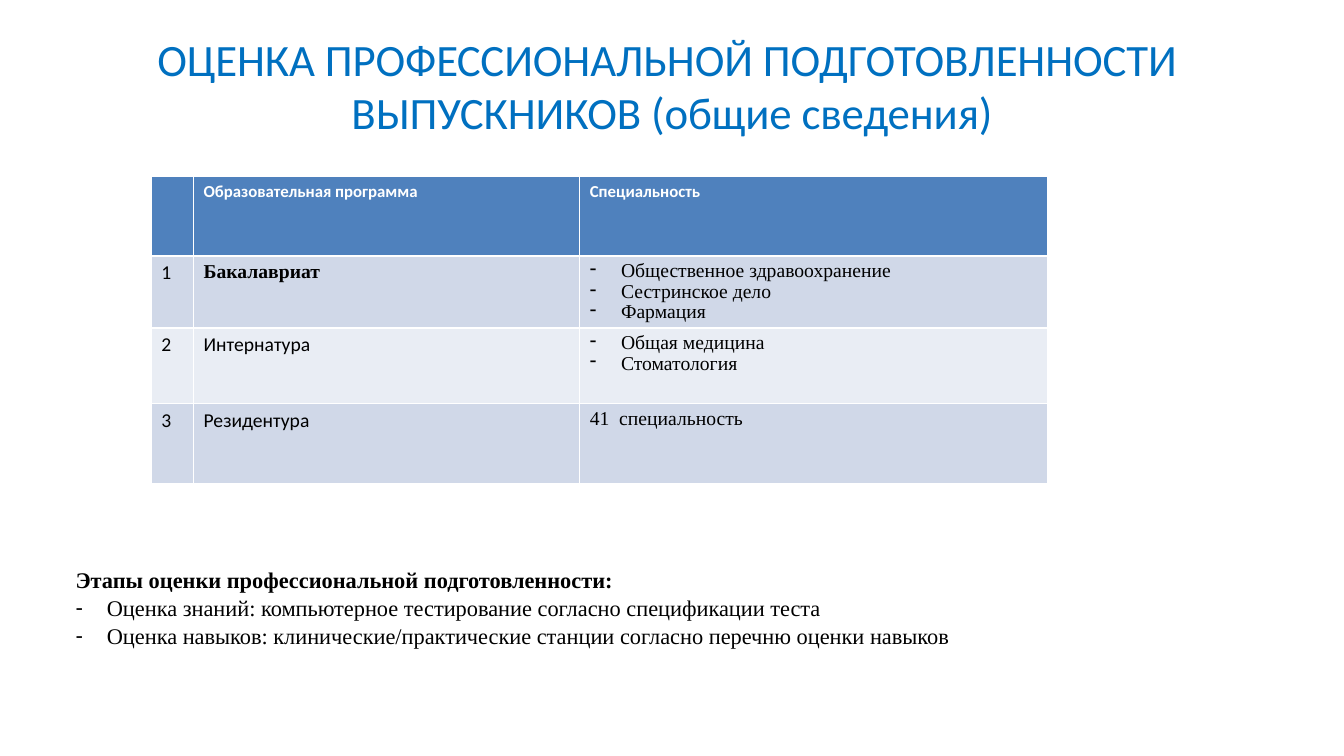
from pptx import Presentation
from pptx.dml.color import RGBColor
from pptx.enum.text import MSO_ANCHOR, PP_ALIGN
from pptx.oxml.ns import qn
from pptx.util import Inches, Pt
from lxml import etree

TITLE_BLUE = RGBColor(0x00, 0x70, 0xC0)
HEADER_BLUE = RGBColor(0x4F, 0x81, 0xBD)
BAND_DARK = RGBColor(0xD0, 0xD8, 0xE8)
BAND_LIGHT = RGBColor(0xE9, 0xED, 0xF4)
BLACK = RGBColor(0, 0, 0)
WHITE = RGBColor(255, 255, 255)
SANS = "Calibri"
SERIF = "Times New Roman"


def add_dash(paragraph):
    """Give the paragraph a hanging dash bullet."""
    properties = paragraph._p.get_or_add_pPr()
    properties.set("marL", str(Inches(0.31)))
    properties.set("indent", str(-Inches(0.31)))
    etree.SubElement(properties, qn("a:buFontTx"))
    etree.SubElement(properties, qn("a:buChar")).set("char", "-")


def style_runs(paragraph, font_name, size, color, bold=False):
    for span in paragraph.runs:
        span.font.name = font_name
        span.font.size = Pt(size)
        span.font.color.rgb = color
        span.font.bold = bold


deck = Presentation()
deck.slide_width = Inches(13.33)
deck.slide_height = Inches(7.5)
page = deck.slides.add_slide(deck.slide_layouts[0])
title = page.shapes.title
stages = page.placeholders[1]

# Title and assessment stages
for box, left, top, width, height in (
    (title, 0.57, 0.31, 12.19, 1.08),
    (stages, 0.75, 5.6, 12.34, 1.11),
):
    box.left, box.top = Inches(left), Inches(top)
    box.width, box.height = Inches(width), Inches(height)
    frame = box.text_frame
    frame.margin_left = frame.margin_right = 0
    frame.margin_top = frame.margin_bottom = 0
    frame.vertical_anchor = MSO_ANCHOR.TOP
    frame.word_wrap = True

title.text_frame.text = "ОЦЕНКА ПРОФЕССИОНАЛЬНОЙ ПОДГОТОВЛЕННОСТИ  ВЫПУСКНИКОВ (общие сведения)"
heading = title.text_frame.paragraphs[0]
heading.alignment = PP_ALIGN.CENTER
style_runs(heading, SANS, 32, TITLE_BLUE)
heading.runs[0].font._element.set("spc", "-10")

stages.text_frame.text = "\n".join([
    "Этапы оценки профессиональной подготовленности:",
    "Оценка знаний: компьютерное тестирование согласно спецификации теста",
    "Оценка навыков: клинические/практические станции согласно перечню оценки навыков",
])
for index, paragraph in enumerate(stages.text_frame.paragraphs):
    paragraph.alignment = PP_ALIGN.LEFT
    paragraph.line_spacing = 1.05
    paragraph.space_before = Pt(0)
    if index > 0:
        add_dash(paragraph)
    style_runs(paragraph, SERIF, 16, BLACK, bold=index == 0)

# Programmes and their specialties
programmes = [
    ("", "Образовательная программа", "Специальность"),
    ("1", "Бакалавриат", "Общественное здравоохранение\nСестринское дело\nФармация"),
    ("2", "Интернатура", "Общая медицина\nСтоматология"),
    ("3", "Резидентура", "41  специальность"),
]
table = page.shapes.add_table(
    4, 3, Inches(1.5), Inches(1.75), Inches(8.89), Inches(3.04)
).table
for column, width in zip(table.columns, (0.42, 3.83, 4.64)):
    column.width = Inches(width)
for row, height in zip(table.rows, (0.79, 0.71, 0.75, 0.79)):
    row.height = Inches(height)

for row_index, texts in enumerate(programmes):
    is_header = row_index == 0
    band = HEADER_BLUE if is_header else BAND_DARK if row_index % 2 else BAND_LIGHT
    for column_index, text in enumerate(texts):
        cell = table.cell(row_index, column_index)
        cell.fill.solid()
        cell.fill.fore_color.rgb = band
        cell.text_frame.text = text
        is_bachelor = text == "Бакалавриат"
        is_specialty = column_index == 2 and not is_header
        font_name = SERIF if is_bachelor or is_specialty else SANS
        for paragraph in cell.text_frame.paragraphs:
            if is_specialty:
                paragraph.line_spacing = 0.95
            if "\n" in text:
                add_dash(paragraph)
            style_runs(paragraph, font_name, 12 if is_header else 14,
                       WHITE if is_header else BLACK, is_header or is_bachelor)

deck.save("out.pptx")
